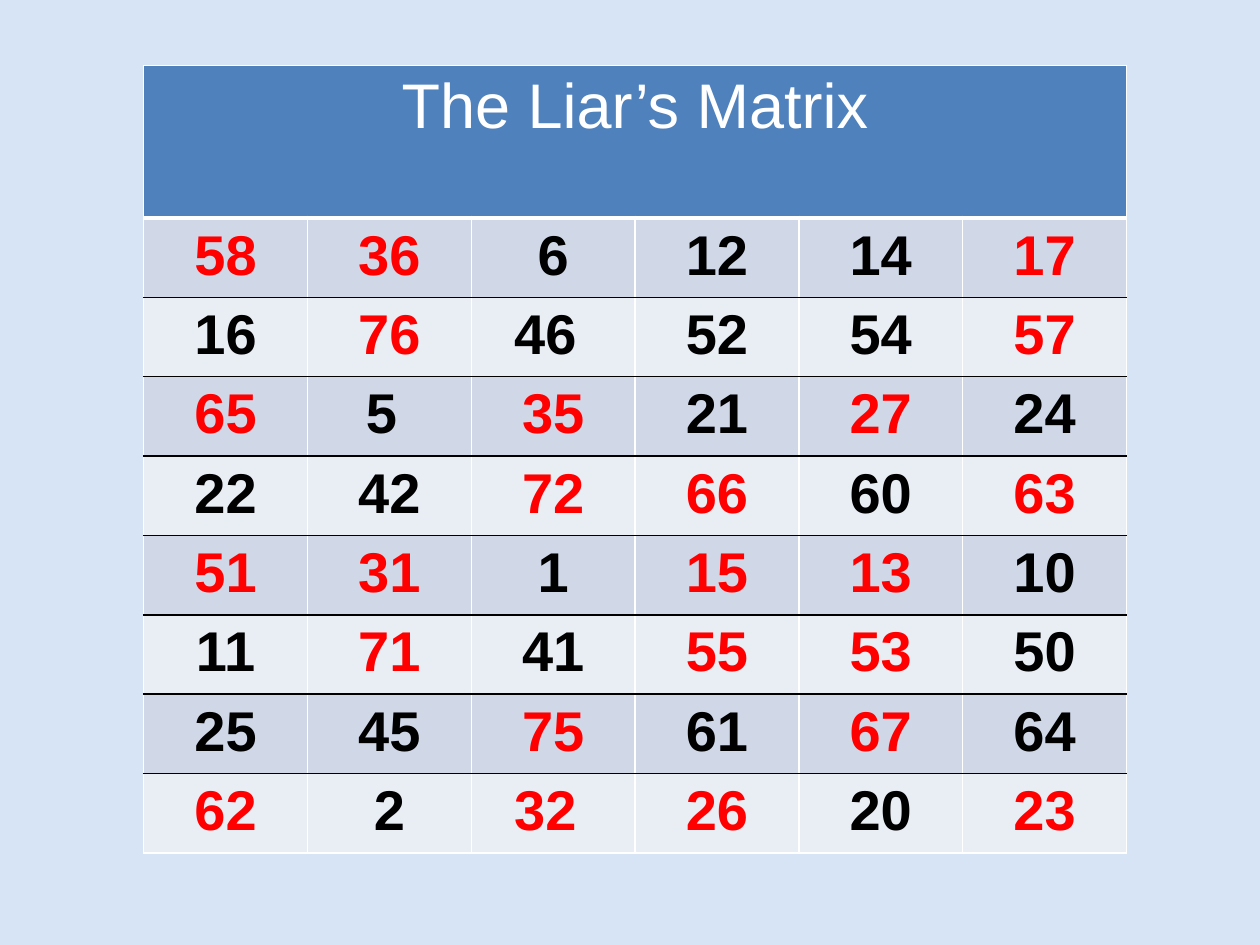
import lxml.etree
import pptx
import pptx.dml.color
import pptx.enum.text
import pptx.oxml.ns
import pptx.util

Inches = pptx.util.Inches

NUMBERS = [
    ["58", "36", "6", "12", "14", "17"],
    ["16", "76", "46 ", "52", "54", "57"],
    ["65", "5 ", "35", "21", "27", "24"],
    ["22", "42", "72", "66", "60", "63"],
    ["51", "31", "1", "15", "13", "10"],
    ["11", "71", "41", "55", "53", "50"],
    ["25", "45", "75", "61", "67", "64"],
    ["62", "2", "32 ", "26", "20", "23"],
]
RED_NUMBERS = {58, 36, 17, 76, 57, 65, 35, 27, 72, 66, 63, 51, 31,
               15, 13, 71, 55, 53, 75, 67, 62, 32, 26, 23}


def color(value):
    return pptx.dml.color.RGBColor.from_string(value)


class MatrixSlide:
    """Hold the style and the current slide, and draw elements on it."""

    font = "Arial"
    background = "D7E4F5"
    header_fill = "4F81BD"
    bands = ("D0D8E8", "E9EDF4")
    white, black, red = "FFFFFF", "000000", "FF0000"

    def __init__(self, presentation):
        self.slide = presentation.slides.add_slide(presentation.slide_layouts[6])
        fill = self.slide.background.fill
        fill.solid()
        fill.fore_color.rgb = color(self.background)

    def border(self, cell, side, line_color, width):
        qn = pptx.oxml.ns.qn
        properties = cell._tc.get_or_add_tcPr()
        line = lxml.etree.SubElement(
            properties, qn(f"a:ln{side}"), w=str(pptx.util.Pt(width)))
        fill = lxml.etree.SubElement(line, qn("a:solidFill"))
        lxml.etree.SubElement(fill, qn("a:srgbClr"), val=line_color)

    def cell(self, cell, text, size, bold, text_color, fill_color, top, bottom):
        side_line = (self.white, 1)
        for side, line in zip("LRTB", (side_line, side_line, top, bottom)):
            self.border(cell, side, *line)
        cell.fill.solid()
        cell.fill.fore_color.rgb = color(fill_color)
        cell.text_frame.text = text
        paragraph = cell.text_frame.paragraphs[0]
        paragraph.alignment = pptx.enum.text.PP_ALIGN.CENTER
        for run in paragraph.runs:
            run.font.name = self.font
            run.font.size = pptx.util.Pt(size)
            run.font.bold = bold
            run.font.color.rgb = color(text_color)

    def matrix(self, title, numbers, left, top, width, header_height, row_height):
        row_count, column_count = len(numbers), len(numbers[0])
        shape = self.slide.shapes.add_table(
            row_count + 1, column_count, Inches(left), Inches(top),
            Inches(width), Inches(header_height + row_count * row_height))
        table = shape.table
        for row in table.rows:
            row.height = Inches(row_height)
        table.rows[0].height = Inches(header_height)
        thin, thick, rule = (self.white, 1), (self.white, 3), (self.black, 1)
        for column in range(column_count):
            self.cell(table.cell(0, column), "" if column else title, 36, False,
                      self.white, self.header_fill, thin, thick)
        table.cell(0, 0).merge(table.cell(0, column_count - 1))
        for row, values in enumerate(numbers, start=1):
            above = thick if row == 1 else rule
            below = thin if row == row_count else rule
            for column, text in enumerate(values):
                text_color = self.red if int(text) in RED_NUMBERS else self.black
                self.cell(table.cell(row, column), text, 32, True, text_color,
                          self.bands[(row - 1) % 2], above, below)


def main():
    presentation = pptx.Presentation()
    presentation.slide_width = Inches(10)
    presentation.slide_height = Inches(7.5)
    MatrixSlide(presentation).matrix(
        "The Liar’s Matrix", NUMBERS, left=1.14, top=0.52, width=7.8,
        header_height=1.21, row_height=0.63)
    presentation.save("out.pptx")


if __name__ == "__main__":
    main()
